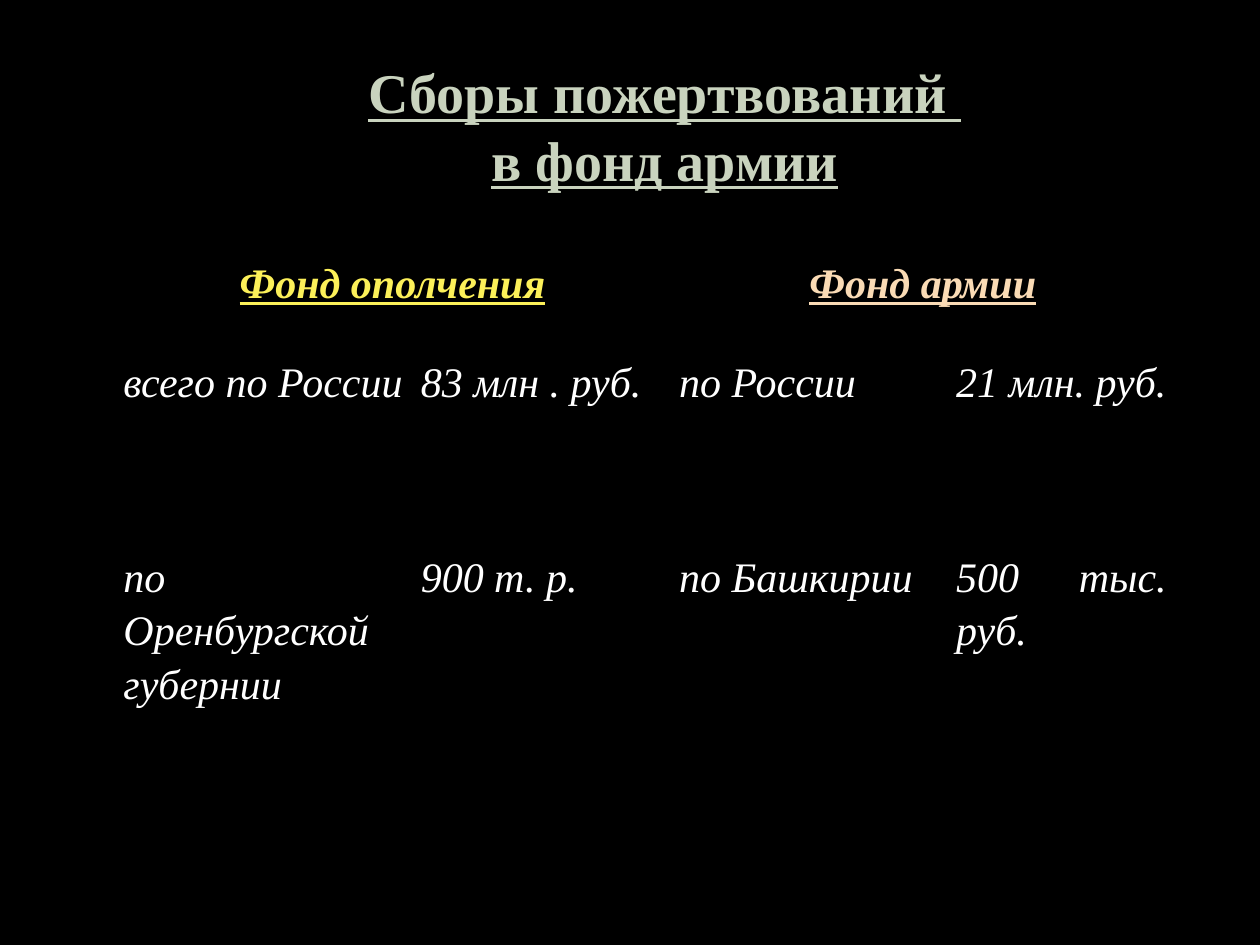
from dataclasses import dataclass
from lxml import etree
from pptx import Presentation
from pptx import util as u
from pptx.dml.color import RGBColor
from pptx.enum import text
from pptx.oxml import ns


@dataclass(frozen=True)
class Theme:
    font: str = "Times New Roman"
    background: str = "000000"
    title: str = "C9D3BE"
    militia: str = "FCF059"
    army: str = "FADBB5"
    body: str = "FFFFFF"
    title_size: int = 32
    table_size: int = 24


@dataclass(frozen=True)
class Entry:
    """Wording and look of one table cell."""
    row: int
    column: int
    wording: str
    color: str
    heading: bool = False
    alignment: text.PP_ALIGN = text.PP_ALIGN.JUSTIFY


THEME = Theme()
COLUMN_WIDTHS = (2.36, 2.05, 2.2, 1.81)
ROW_HEIGHTS = (0.78, 1.55, 1.77)
TITLE_LINES = ("Сборы пожертвований ", "в фонд армии")
FUND_HEADINGS = (("Фонд ополчения", THEME.militia), ("Фонд армии", THEME.army))
DONATIONS = (
    ("всего по России", "83 млн . руб.", "по России", "21 млн. руб."),
    ("по Оренбургской губернии", "900 т. р.", "по Башкирии", "500 тыс. руб."),
)


def set_attributes(target, values: dict) -> None:
    for name, value in values.items():
        setattr(target, name, value)


def add_words(paragraph, wording: str, color: str, **font_values) -> None:
    run = paragraph.add_run()
    run.text = wording
    set_attributes(run.font, {"name": THEME.font, **font_values})
    run.font.color.rgb = RGBColor.from_string(color)


def add_borders(cell, color: str) -> None:
    properties = cell._tc.get_or_add_tcPr()
    for side in ("lnL", "lnR", "lnT", "lnB"):
        line = etree.SubElement(properties, ns.qn(f"a:{side}"), w=str(u.Pt(1)))
        fill = etree.SubElement(line, ns.qn("a:solidFill"))
        etree.SubElement(fill, ns.qn("a:srgbClr"), val=color)


def write_entry(table, entry: Entry) -> None:
    cell = table.cell(entry.row, entry.column)
    paragraph = cell.text_frame.paragraphs[0]
    set_attributes(paragraph, {"alignment": entry.alignment, "line_spacing": 1.15})
    add_words(paragraph, entry.wording, entry.color, size=u.Pt(THEME.table_size),
              bold=entry.heading, italic=True, underline=entry.heading)


def add_title(slide) -> None:
    title = slide.shapes.title
    set_attributes(title, {"left": u.Inches(2.8), "top": u.Inches(0.36),
                           "width": u.Inches(4.95), "height": u.Inches(1.72)})
    frame = title.text_frame
    set_attributes(frame, {"word_wrap": False, "auto_size": text.MSO_AUTO_SIZE.NONE,
                           "vertical_anchor": text.MSO_ANCHOR.TOP,
                           "margin_top": u.Inches(0.1)})
    for index, line in enumerate(TITLE_LINES):
        paragraph = frame.add_paragraph() if index else frame.paragraphs[0]
        paragraph.alignment = text.PP_ALIGN.CENTER
        add_words(paragraph, line, THEME.title, size=u.Pt(THEME.title_size),
                  bold=True, underline=True)


def add_donation_table(slide) -> None:
    table = slide.shapes.add_table(
        len(ROW_HEIGHTS), len(COLUMN_WIDTHS), u.Inches(0.91), u.Inches(2.02),
        u.Inches(sum(COLUMN_WIDTHS)), u.Inches(sum(ROW_HEIGHTS))).table
    set_attributes(table, {"first_row": False, "horz_banding": False})
    for column, width in zip(table.columns, COLUMN_WIDTHS):
        column.width = u.Inches(width)
    for row, height in zip(table.rows, ROW_HEIGHTS):
        row.height = u.Inches(height)

    # Clear cells with thin borders
    for cell in table.iter_cells():
        set_attributes(cell, {"margin_left": u.Inches(0.07), "margin_right": u.Inches(0.07),
                              "margin_top": 0, "margin_bottom": 0})
        add_borders(cell, THEME.background)
        cell.fill.background()

    # Fund headings, each over two columns
    for index, (wording, color) in enumerate(FUND_HEADINGS):
        first = 2 * index
        table.cell(0, first).merge(table.cell(0, first + 1))
        write_entry(table, Entry(0, first, wording, color, True, text.PP_ALIGN.CENTER))

    # Regions and sums
    for row, wordings in enumerate(DONATIONS, start=1):
        for column, wording in enumerate(wordings):
            write_entry(table, Entry(row, column, wording, THEME.body))


def main() -> None:
    presentation = Presentation()
    set_attributes(presentation, {"slide_width": u.Inches(10), "slide_height": u.Inches(7.5)})
    slide = presentation.slides.add_slide(presentation.slide_layouts.get_by_name("Title Only"))
    background = slide.background.fill
    background.solid()
    background.fore_color.rgb = RGBColor.from_string(THEME.background)
    add_donation_table(slide)
    add_title(slide)
    presentation.save("out.pptx")


if __name__ == "__main__":
    main()
